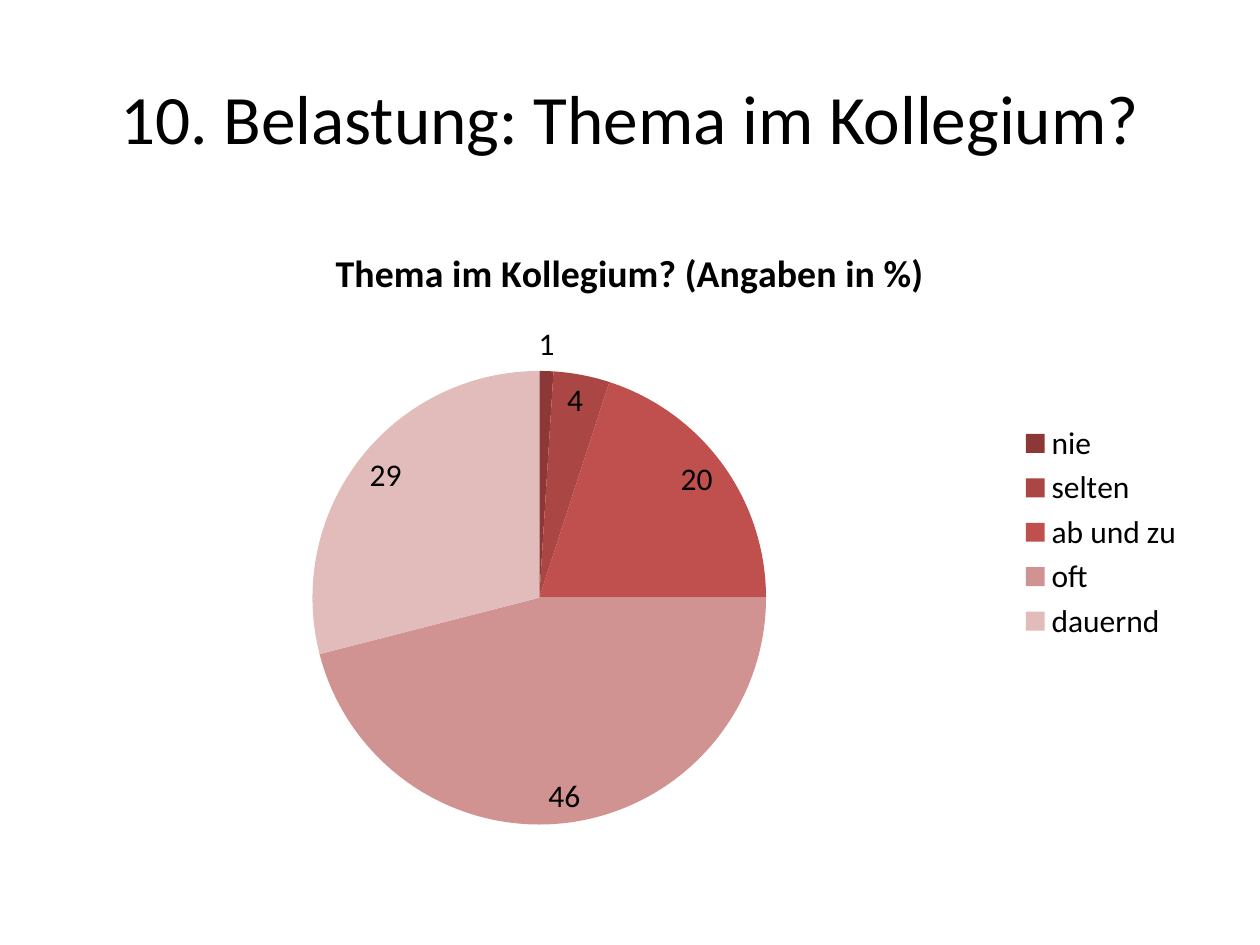
from pptx import Presentation
from pptx.chart.data import CategoryChartData
from pptx.dml.color import RGBColor
from pptx.enum.chart import XL_CHART_TYPE, XL_LABEL_POSITION as POS, XL_LEGEND_POSITION
from pptx.enum.text import MSO_ANCHOR, PP_ALIGN
from pptx.oxml import parse_xml
from pptx.oxml.ns import nsdecls
from pptx.util import Inches, Pt

FONT = "Calibri"
COLORS = {
    "text": "000000",
    "nie": "8C3836",
    "selten": "AA4643",
    "ab und zu": "C0504D",
    "oft": "D19392",
    "dauernd": "E1BCBB",
}
SHARES = {"nie": 1, "selten": 4, "ab und zu": 20, "oft": 46, "dauernd": 29}
CHART_TITLE = "Thema im Kollegium? (Angaben in %)"


def write(tf, text, size, bold=False, align=PP_ALIGN.CENTER):
    p = tf.paragraphs[0]
    p.alignment = align
    r = p.add_run()
    r.text = text
    r.font.name = FONT
    r.font.size = Pt(size)
    r.font.bold = bold
    r.font.color.rgb = RGBColor.from_string(COLORS["text"])


prs = Presentation()
prs.slide_width, prs.slide_height = Inches(10), Inches(7.5)
s = prs.slides.add_slide(prs.slide_layouts[6])

# Slide title
tf = s.shapes.add_textbox(Inches(0.5), Inches(0.3), Inches(9), Inches(1.25)).text_frame
tf.word_wrap = True
tf.vertical_anchor = MSO_ANCHOR.MIDDLE
write(tf, "10. Belastung: Thema im Kollegium?", 39.6)

# Pie chart
data = CategoryChartData()
data.categories = list(SHARES)
data.add_series(CHART_TITLE, list(SHARES.values()))
chart = s.shapes.add_chart(XL_CHART_TYPE.PIE, Inches(0.5), Inches(1.75),
                           Inches(9), Inches(4.95), data).chart
chart.font.name = FONT
chart.font.size = Pt(18)
chart.font.color.rgb = RGBColor.from_string(COLORS["text"])
chart.has_title = True
write(chart.chart_title.text_frame, CHART_TITLE, 21.6, bold=True)

# Legend
chart.has_legend = True
chart.legend.position = XL_LEGEND_POSITION.RIGHT
chart.legend.include_in_layout = False

# Slices and value labels
plot = chart.plots[0]
plot.vary_by_categories = True
for i, name in enumerate(SHARES):
    fill = plot.series[0].points[i].format.fill
    fill.solid()
    fill.fore_color.rgb = RGBColor.from_string(COLORS[name])
plot.has_data_labels = True
plot.data_labels.show_value = True
plot.data_labels.show_percentage = False
plot.data_labels.position = POS.BEST_FIT

# Pie position as fractions of the chart
area = chart._chartSpace.chart.plotArea
for old in area.findall("{*}layout"):
    area.remove(old)
box = {"x": 0.22, "y": 0.24, "w": 0.4, "h": 0.73}
area.insert(0, parse_xml(
    f'<c:layout {nsdecls("c")}><c:manualLayout><c:layoutTarget val="inner"/>'
    '<c:xMode val="edge"/><c:yMode val="edge"/>'
    + "".join(f'<c:{k} val="{v}"/>' for k, v in box.items())
    + "</c:manualLayout></c:layout>"))

prs.save("out.pptx")
